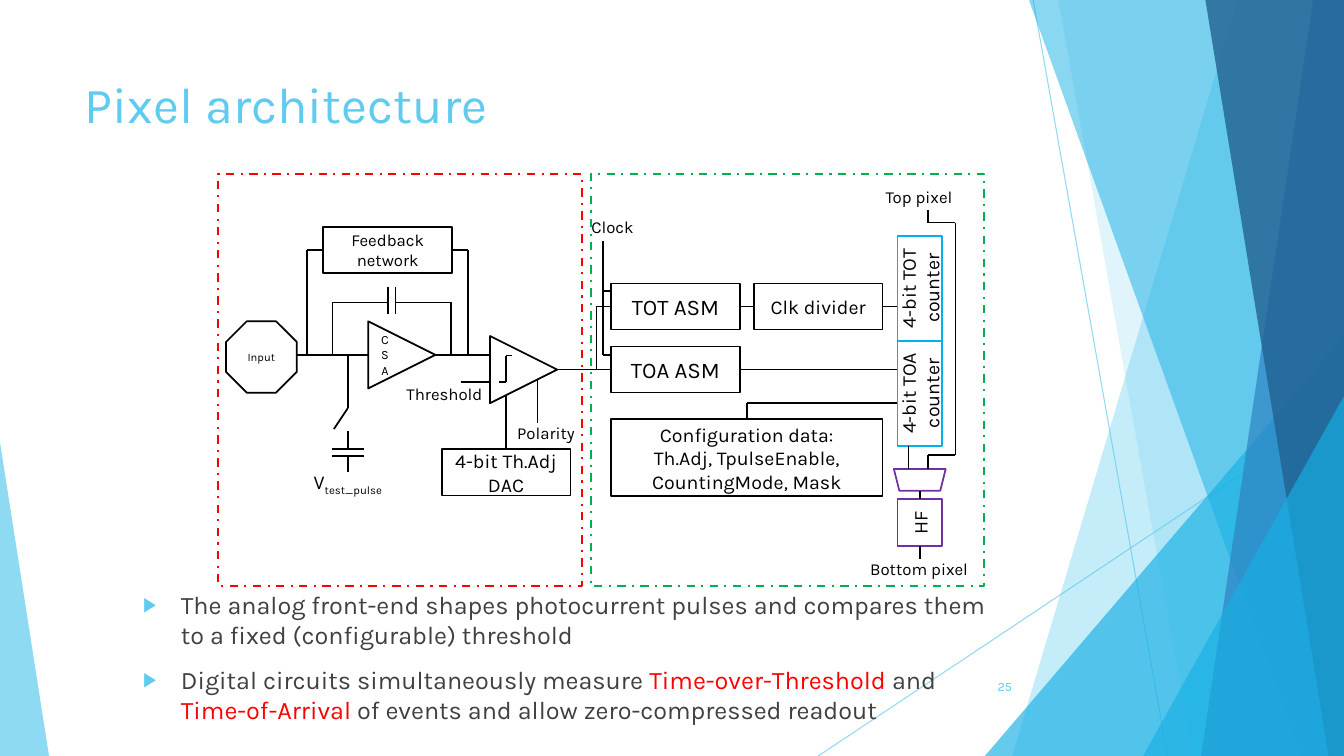
"""Build the pixel architecture slide with its block diagram."""
from itertools import pairwise

from lxml import etree
from pptx import Presentation
from pptx.dml.color import RGBColor
from pptx.enum.dml import MSO_LINE
from pptx.enum.shapes import MSO_CONNECTOR, MSO_SHAPE
from pptx.enum.text import MSO_ANCHOR, MSO_AUTO_SIZE, PP_ALIGN
from pptx.oxml.ns import qn
from pptx.util import Pt

RECT, TRIANGLE = MSO_SHAPE.RECTANGLE, MSO_SHAPE.ISOSCELES_TRIANGLE
OCTAGON, TRAPEZOID = MSO_SHAPE.OCTAGON, MSO_SHAPE.TRAPEZOID
STRAIGHT, DASH_DOT = MSO_CONNECTOR.STRAIGHT, MSO_LINE.DASH_DOT
LEFT, CENTER, RIGHT = PP_ALIGN.LEFT, PP_ALIGN.CENTER, PP_ALIGN.RIGHT
TOP, MIDDLE = MSO_ANCHOR.TOP, MSO_ANCHOR.MIDDLE
NO_FIT = MSO_AUTO_SIZE.NONE

WIDTH, HEIGHT = 960, 540
FONT = "Karla"
SKY, AZURE, BLACK, WHITE, RED = "5FCBEF", "17B0E4", "000000", "FFFFFF", "FF0000"
CYAN, PURPLE, GREEN, GRAY = "00B0F0", "7030A0", "00B050", "404040"

TITLE = "Pixel architecture"
BULLETS = [
    [("The analog front-end shapes photocurrent pulses and compares them "
      "to a fixed (configurable) threshold", GRAY)],
    [("Digital circuits simultaneously measure ", GRAY), ("Time-over-Threshold", RED),
     (" and ", GRAY), ("Time-of-Arrival", RED),
     (" of events and allow zero-compressed readout", GRAY)],
]

RAYS = [((738, 0), (834, 540)), ((960, 290), (584.5, 540))]
BANDS_BACK = [(884, 723, SKY, 36), (756, 852, SKY, 20)]
BANDS_FRONT = [(735, 929.5, AZURE, 50), (938, 858, "2E83C3", 70), (861, 949, "226292", 80)]
WEDGE_BACK = (703.5, 240, 256.5, 300, 1, AZURE, 66)
WEDGES_FRONT = [(816.5, 283, 143.5, 257, 1, AZURE, 66), (0, 316, 35, 224, 0, SKY, 70)]

BLOCK = (92, 33)
COUNTER = (32, 75)
BLOCKS = [
    ("Feedback network", (231, 162), BLOCK, 12, BLACK),
    ("4-bit Th.Adj DAC", (315.5, 321), BLOCK, 14, BLACK),
    ("TOT ASM", (436.5, 202.5), BLOCK, 16, BLACK),
    ("TOA ASM", (436.5, 247.5), BLOCK, 16, BLACK),
    ("Clk divider", (538.5, 202.5), BLOCK, 14, BLACK),
    ("Configuration data:\nTh.Adj, TpulseEnable, CountingMode, Mask",
     (436.5, 299.5), (194, 55), 14, BLACK),
    ("4-bit TOT counter", (641, 168.5), COUNTER, 14, CYAN),
    ("4-bit TOA counter", (641, 243.5), COUNTER, 14, CYAN),
    ("HF", (641, 356.5), (32, 33.5), 14, PURPLE),
]
SYMBOLS = [
    (OCTAGON, "Input", (161.5, 229.5, 50.5, 51), 0, 8, WHITE, BLACK),
    (TRIANGLE, "CSA", (263, 229.5, 48, 48), 90, 9, WHITE, BLACK),
    (TRIANGLE, "", (350, 240, 48, 48), 90, 9, WHITE, BLACK),
    (TRAPEZOID, "", (638.5, 335, 37, 15.5), 180, 9, None, PURPLE),
]
FRAMES = [((422, 124, 281, 294.5), GREEN), ((156, 124, 259.5, 294.5), RED)]
LABELS = [("Polarity", 344, 293), ("Bottom pixel", 610.5, 390), ("Top pixel", 610.5, 124),
          ("Threshold", 271.5, 265), ("Clock", 391.5, 145.5)]

UP, WEST, DOWN, EAST = range(4)
CONFIG = BLOCKS[5][0]
WIRES = [
    [(212, 253.5), (263, 253.5)],
    [(311, 253.5), (350, 253.5)],
    [(237.5, 253.5), (237.5, 216), (277, 216)],
    [(277, 205), (277, 224.5)],
    [(282.5, 205), (282.5, 224.5)],
    [(282.5, 216), (322, 216), (322, 253.5)],
    [(219.5, 253.5), (219.5, 178.5), ("Feedback network", WEST)],
    [(334.5, 253.5), (334.5, 178.5), ("Feedback network", EAST)],
    [(248.5, 253.5), (248.5, 291.5), (238.5, 306.5)],
    [(248.5, 308), (248.5, 320.5)],
    [(237, 320.5), (260, 320.5)],
    [(237, 325.5), (260, 325.5)],
    [(248.5, 325.5), (248.5, 337.5)],
    [(356.5, 273), (361.5, 273), (361.5, 254), (366, 254)],
    [(361.5, 283), ("4-bit Th.Adj DAC", UP)],
    [(384, 271.5), (384, 302.5)],
    [(329, 273), (350, 273)],
    [(398, 264), ("TOA ASM", WEST)],
    [(426, 264), (426, 219), ("TOT ASM", WEST)],
    [("TOT ASM", EAST), ("Clk divider", WEST)],
    [("Clk divider", EAST), (641, 219)],
    [("TOA ASM", EAST), (641, 264)],
    [(431, 172), (431, 253.5), (436.5, 253.5)],
    [(431, 208), (436.5, 208)],
    [(663, 150), (663, 159), (682.5, 159), (682.5, 325), (663, 325), (663, 335)],
    [(649, 318.5), (649, 335)],
    [(657, 350.5), ("HF", UP)],
    [("HF", DOWN), (657, 399.5)],
    [(CONFIG, UP), (533.5, 288), (641, 288)],
]


def paint(target, color, opacity=100):
    """Set a solid colour on a fill, with optional transparency."""
    target.solid()
    target.fore_color.rgb = RGBColor.from_string(color)
    if opacity < 100:
        tint = target.fore_color._xFill[0]
        etree.SubElement(tint, qn("a:alpha"), val=str(opacity * 1000))


def set_font(font, size, color):
    font.name, font.size = FONT, Pt(size)
    font.color.rgb = RGBColor.from_string(color)


def write(box, text, size, color=BLACK, align=CENTER, anchor=MIDDLE):
    frame = box.text_frame
    frame.word_wrap, frame.auto_size, frame.vertical_anchor = True, NO_FIT, anchor
    frame.text = text
    for para in frame.paragraphs:
        para.alignment = align
        set_font(para.font, size, color)


def place(box, left, top, width, height):
    box.left, box.top, box.width, box.height = map(Pt, (left, top, width, height))


def add_shape(page, kind, area, fill=None, opacity=100, line=None, weight=1.25):
    shape = page.shapes.add_shape(kind, *map(Pt, area))
    shape.shadow.inherit = False
    style(shape, fill, opacity, line, weight)
    return shape


def style(shape, fill, opacity, line, weight):
    if fill:
        paint(shape.fill, fill, opacity)
    else:
        shape.fill.background()
    if line:
        paint(shape.line.fill, line)
        shape.line.width = Pt(weight)
    else:
        shape.line.fill.background()


def add_label(page, text, left, top, size=12, area=BLOCK, color=BLACK, align=CENTER):
    box = page.shapes.add_textbox(*map(Pt, (left, top, *area)))
    write(box, text, size, color, align)
    return box


def add_line(page, start, end, color=BLACK, weight=1.25, opacity=100):
    line = page.shapes.add_connector(STRAIGHT, *map(Pt, (*start, *end)))
    paint(line.line.fill, color, opacity)
    line.line.width = Pt(weight)
    etree.SubElement(line.element.spPr, qn("a:effectLst"))
    return line


def add_band(page, top_x, bottom_x, color, opacity):
    outline = page.shapes.build_freeform(Pt(top_x), 0)
    corners = [(WIDTH, 0), (WIDTH, HEIGHT), (bottom_x, HEIGHT)]
    outline.add_line_segments([(Pt(x), Pt(y)) for x, y in corners], close=True)
    band = outline.convert_to_shape()
    band.shadow.inherit = False
    style(band, color, opacity, None, 0)


def add_wedge(page, left, top, width, height, apex, color, opacity):
    wedge = add_shape(page, TRIANGLE, (left, top, width, height), color, opacity)
    wedge.adjustments[0] = apex


def add_backdrop(page):
    for start, end in RAYS:
        add_line(page, start, end, SKY, 0.75, 70)
    for band in BANDS_BACK:
        add_band(page, *band)
    add_wedge(page, *WEDGE_BACK)
    for band in BANDS_FRONT:
        add_band(page, *band)
    for wedge in WEDGES_FRONT:
        add_wedge(page, *wedge)


def fill_body(body):
    place(body, 95, 417.5, 624.5, 108)
    frame = body.text_frame
    frame.auto_size, frame.vertical_anchor = NO_FIT, TOP
    for index, spans in enumerate(BULLETS):
        para = frame.add_paragraph() if index else frame.paragraphs[0]
        para.space_before = Pt(10 if index else 0)
        props = para._p.get_or_add_pPr()
        props.set("marL", str(Pt(27)))
        props.set("indent", str(-Pt(27)))
        tint = etree.SubElement(props, qn("a:buClr"))
        etree.SubElement(tint, qn("a:srgbClr"), val=SKY)
        etree.SubElement(props, qn("a:buSzPct"), val="80000")
        etree.SubElement(props, qn("a:buChar"), char="▶")
        set_font(para.font, 18, GRAY)
        for text, color in spans:
            span = para.add_run()
            span.text = text
            if color != GRAY:
                span.font.color.rgb = RGBColor.from_string(color)


def add_diagram(page):
    blocks, sites = {}, {}
    for kind, text, area, turn, size, fill, line in SYMBOLS:
        symbol = add_shape(page, kind, area, fill, line=line)
        symbol.rotation = turn
        if text:
            write(symbol, text, size)
            if turn:
                symbol.text_frame._txBody.bodyPr.set("vert", "vert270")
    for text, (left, top), (width, height), size, line in BLOCKS:
        block = add_shape(page, RECT, (left, top, width, height), line=line)
        write(block, text, size)
        if line != BLACK:
            block.text_frame._txBody.bodyPr.set("vert", "vert270")
        blocks[text] = block
        middle_x, middle_y = left + width / 2, top + height / 2
        sites[text] = [(middle_x, top), (left, middle_y),
                       (middle_x, top + height), (left + width, middle_y)]
    for wire in WIRES:
        for ends in pairwise(wire):
            points = [sites[a][b] if a in sites else (a, b) for a, b in ends]
            line = add_line(page, *points)
            for (name, side), join in zip(ends, (line.begin_connect, line.end_connect)):
                if name in blocks:
                    join(blocks[name], side)
    for area, color in FRAMES:
        add_shape(page, RECT, area, line=color, weight=1.5).line.dash_style = DASH_DOT
    for label in LABELS:
        add_label(page, *label)
    para = add_label(page, "V", 202.5, 328.5, 14).text_frame.paragraphs[0]
    subscript = para.add_run()
    subscript.text = "test_pulse"
    subscript._r.get_or_add_rPr().set("baseline", "-25000")


def main():
    deck = Presentation()
    deck.slide_width, deck.slide_height = Pt(WIDTH), Pt(HEIGHT)
    page = deck.slides.add_slide(deck.slide_layouts[1])
    title, body = page.placeholders
    tree = body.element.getparent()
    add_backdrop(page)
    tree.append(body.element)
    fill_body(body)
    add_diagram(page)
    add_label(page, "25", 676, 476, 9, (54, 29), SKY, RIGHT)
    tree.append(title.element)
    place(title, 53.5, 48.5, 677, 103.5)
    write(title, TITLE, 36, SKY, LEFT, TOP)
    deck.save("out.pptx")


if __name__ == "__main__":
    main()
